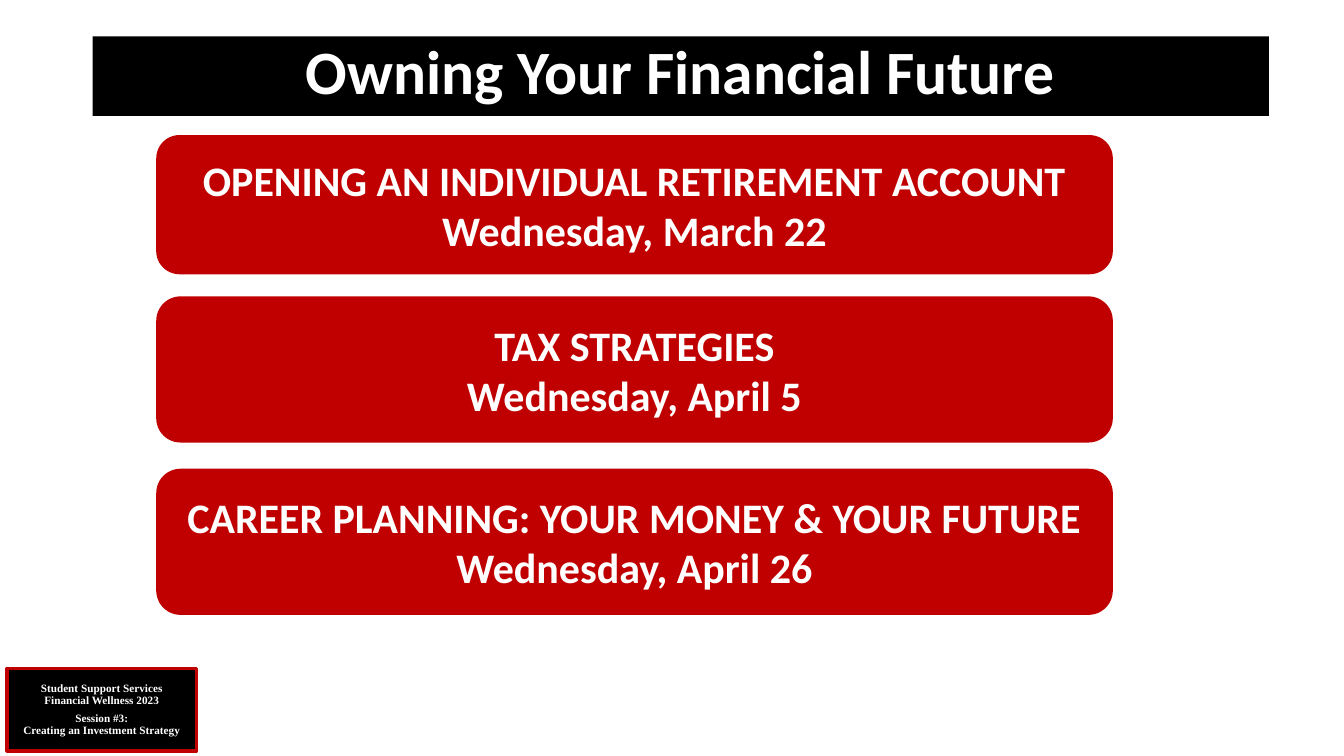
from pptx import Presentation
from pptx.dml.color import RGBColor
from pptx.enum import shapes, text
from pptx.util import Pt

BLACK, RED, WHITE = "000000", "C00000", "FFFFFF"


def paint(color_format, hex_color):
    color_format.rgb = RGBColor.from_string(hex_color)


def add_panel(kind, box, fill, paragraphs, font, size, spacing=1.0):
    """Add a filled panel; each paragraph is a list of lines."""
    panel = slide.shapes.add_shape(kind, *[Pt(length) for length in box])
    panel.shadow.inherit = False
    panel.fill.solid()
    paint(panel.fill.fore_color, fill)
    panel.line.fill.background()
    frame = panel.text_frame
    frame.word_wrap = True
    frame.vertical_anchor = text.MSO_ANCHOR.MIDDLE
    for i, lines in enumerate(paragraphs):
        paragraph = frame.add_paragraph() if i else frame.paragraphs[0]
        paragraph.alignment = text.PP_ALIGN.CENTER
        paragraph.line_spacing = spacing
        for j, line in enumerate(lines):
            if j:
                paragraph.add_line_break()
            run = paragraph.add_run()
            run.text = line
            run.font.name, run.font.size, run.font.bold = font, Pt(size), True
            paint(run.font.color, WHITE)
    return panel


prs = Presentation()
prs.slide_width, prs.slide_height = Pt(960), Pt(540)
slide = prs.slides.add_slide(prs.slide_layouts[6])
rectangle = shapes.MSO_SHAPE.RECTANGLE
rounded = shapes.MSO_SHAPE.ROUNDED_RECTANGLE

# Workshop label in the corner
label = add_panel(
    rectangle, (5, 477.5, 135.4, 59), BLACK,
    [["Student Support Services"], ["Financial Wellness 2023"],
     ["Session #3:", "Creating an Investment Strategy"]],
    "Times New Roman", 8, 0.9)
paint(label.line.color, RED)
label.line.width = Pt(2.25)
label.text_frame.paragraphs[2].space_before = Pt(4.4)

# Title bar
title = add_panel(rectangle, (66.2, 25.9, 840.2, 56.9), BLACK,
                  [["Owning Your Financial Future"]], "Calibri", 44, 0.9)
title.text_frame.vertical_anchor = text.MSO_ANCHOR.TOP

# Upcoming sessions
sessions = [
    (96.5, 99.4, "OPENING AN INDIVIDUAL RETIREMENT ACCOUNT", "Wednesday, March 22"),
    (211.7, 104.4, "TAX STRATEGIES", "Wednesday, April 5"),
    (334.8, 104.4, "CAREER PLANNING: YOUR MONEY & YOUR FUTURE", "Wednesday, April 26"),
]
for top, height, topic, date in sessions:
    add_panel(rounded, (111.6, top, 683.3, height), RED,
              [[topic], [date]], "Calibri", 30)

prs.save("out.pptx")
